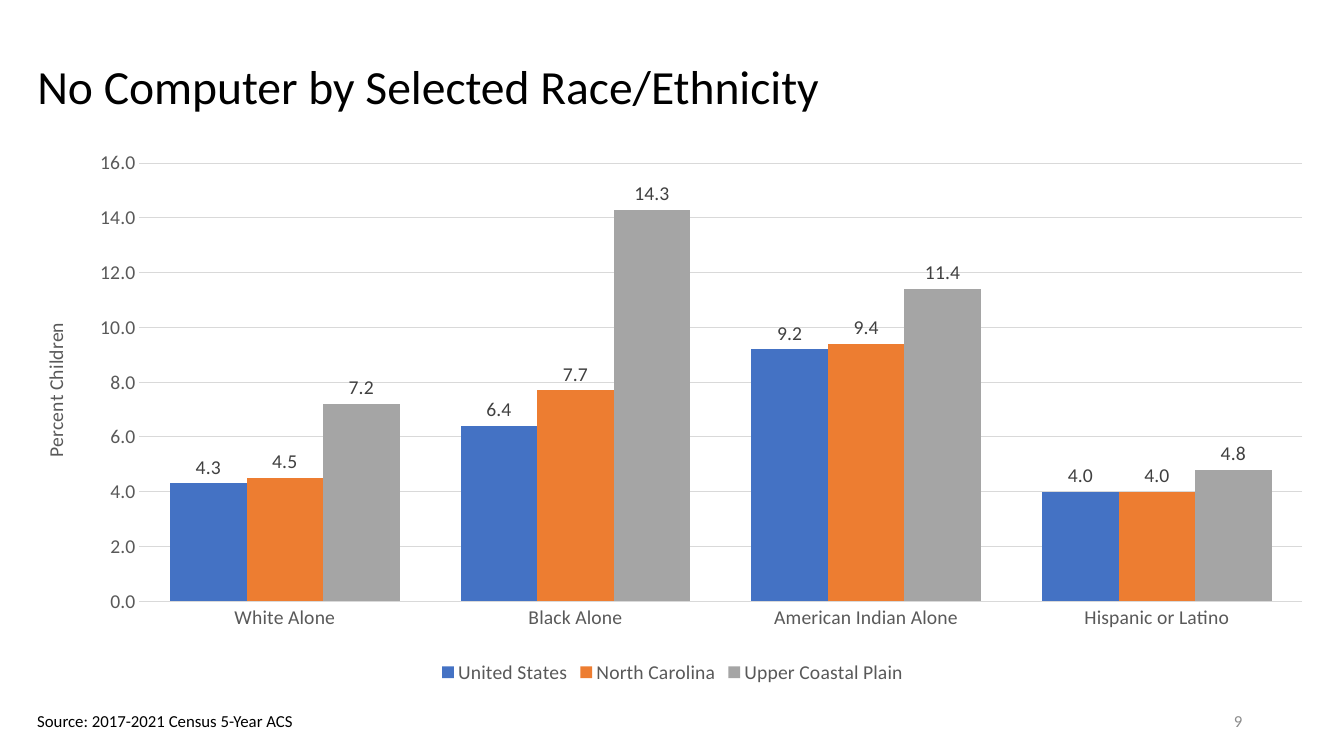
from dataclasses import dataclass

from lxml.etree import SubElement
from pptx import Presentation
from pptx.chart.data import CategoryChartData
from pptx.dml.color import RGBColor
from pptx.enum.chart import XL_CHART_TYPE as ChartType
from pptx.enum.chart import XL_LABEL_POSITION as LabelPosition
from pptx.enum.chart import XL_LEGEND_POSITION as LegendPosition
from pptx.enum.chart import XL_TICK_MARK as TickMark
from pptx.enum.text import MSO_ANCHOR as Anchor
from pptx.enum.text import PP_ALIGN as Align
from pptx.oxml.ns import qn
from pptx.util import Inches, Pt


@dataclass(frozen=True)
class Theme:
    font: str = "Calibri"
    ink: str = "000000"
    axis_text: str = "595959"
    label_text: str = "404040"
    page_number: str = "8C8C8C"
    grid: str = "D9D9D9"
    title_size: int = 34
    chart_size: int = 14
    note_size: int = 12
    grid_width: float = 0.75


@dataclass(frozen=True)
class Region:
    name: str
    color: str
    values: tuple[float, ...]


@dataclass(frozen=True)
class Note:
    text: str
    left: float
    top: float
    width: float
    height: float
    color: str
    align: Align
    anchor: Anchor
    wrap: bool


THEME = Theme()
NUMBER_FORMAT = "#,##0.0"
GROUPS = ("White Alone", "Black Alone", "American Indian Alone", "Hispanic or Latino")
REGIONS = (
    Region("United States", "4472C4", (4.3, 6.4, 9.2, 4.0)),
    Region("North Carolina", "ED7D31", (4.5, 7.7, 9.4, 4.0)),
    Region("Upper Coastal Plain", "A5A5A5", (7.2, 14.3, 11.4, 4.8)),
)
NOTES = (
    Note("9", 9.42, 6.95, 3, 0.4, THEME.page_number, Align.RIGHT, Anchor.MIDDLE, True),
    Note("Source: 2017-2021 Census 5-Year ACS", 0.27, 7, 2.78, 0.3,
         THEME.ink, Align.LEFT, Anchor.TOP, False),
)
PLOT_AREA = {"x": 0.087, "y": 0.035, "w": 0.901, "h": 0.805}


def style_font(font, size: int, color: str) -> None:
    font.name = THEME.font
    font.size = Pt(size)
    font.bold = False
    font.color.rgb = RGBColor.from_string(color)


def style_line(line) -> None:
    line.color.rgb = RGBColor.from_string(THEME.grid)
    line.width = Pt(THEME.grid_width)


def add_span(para, text: str, size: int, color: str) -> None:
    span = para.add_run()
    span.text = text
    style_font(span.font, size, color)


def add_title(page, text: str) -> None:
    title = page.shapes.title
    title.left, title.top = Inches(0.27), Inches(0.34)
    title.width, title.height = Inches(12.76), Inches(1.09)
    title.text_frame.vertical_anchor = Anchor.MIDDLE
    para = title.text_frame.paragraphs[0]
    para.alignment = Align.LEFT
    para.line_spacing = 0.9
    add_span(para, text, THEME.title_size, THEME.ink)


def add_note(page, note: Note) -> None:
    box = page.shapes.add_textbox(Inches(note.left), Inches(note.top),
                                  Inches(note.width), Inches(note.height))
    box.text_frame.word_wrap = note.wrap
    box.text_frame.vertical_anchor = note.anchor
    para = box.text_frame.paragraphs[0]
    para.alignment = note.align
    add_span(para, note.text, THEME.note_size, note.color)


def place_plot(chart) -> None:
    """Fix the inner plot area as fractions of the chart frame."""
    plot_area = chart.plots[0]._element.getparent()
    for old_layout in plot_area.findall(qn("c:layout")):
        plot_area.remove(old_layout)
    layout = SubElement(plot_area, qn("c:layout"))
    plot_area.insert(0, layout)
    manual = SubElement(layout, qn("c:manualLayout"))
    settings = {"layoutTarget": "inner", "xMode": "edge", "yMode": "edge", **PLOT_AREA}
    for tag, value in settings.items():
        SubElement(manual, qn(f"c:{tag}")).set("val", str(value))


def style_axes(chart) -> None:
    for axis in (chart.category_axis, chart.value_axis):
        axis.major_tick_mark = axis.minor_tick_mark = TickMark.NONE
        style_font(axis.tick_labels.font, THEME.chart_size, THEME.axis_text)
    style_line(chart.category_axis.format.line)

    percent = chart.value_axis
    percent.minimum_scale, percent.maximum_scale, percent.major_unit = 0, 16, 2
    percent.format.line.fill.background()
    style_line(percent.major_gridlines.format.line)
    percent.tick_labels.number_format = NUMBER_FORMAT
    percent.tick_labels.number_format_is_linked = False
    para = percent.axis_title.text_frame.paragraphs[0]
    add_span(para, "Percent Children", THEME.chart_size, THEME.axis_text)


def style_bars(plot) -> None:
    plot.gap_width, plot.overlap = 80, 0
    plot.vary_by_categories = False
    for series, region in zip(plot.series, REGIONS):
        series.format.fill.solid()
        series.format.fill.fore_color.rgb = RGBColor.from_string(region.color)
        labels = series.data_labels
        labels.show_value = True
        labels.position = LabelPosition.OUTSIDE_END
        labels.number_format = NUMBER_FORMAT
        labels.number_format_is_linked = False
        style_font(labels.font, THEME.chart_size, THEME.label_text)


def add_computer_chart(page) -> None:
    chart_data = CategoryChartData(number_format=NUMBER_FORMAT)
    chart_data.categories = GROUPS
    for region in REGIONS:
        chart_data.add_series(region.name, region.values)
    chart = page.shapes.add_chart(ChartType.COLUMN_CLUSTERED, Inches(0.27), Inches(1.43),
                                  Inches(12.8), Inches(5.4), chart_data).chart
    style_font(chart.font, THEME.chart_size, THEME.ink)
    chart.has_title = False
    chart.has_legend = True
    chart.legend.position = LegendPosition.BOTTOM
    chart.legend.include_in_layout = False
    style_font(chart.legend.font, THEME.chart_size, THEME.axis_text)
    style_axes(chart)
    style_bars(chart.plots[0])
    place_plot(chart)


def main() -> None:
    deck = Presentation()
    deck.slide_width, deck.slide_height = Inches(13.33), Inches(7.5)
    page = deck.slides.add_slide(deck.slide_layouts.get_by_name("Title Only"))
    add_title(page, "No Computer by Selected Race/Ethnicity")
    for note in NOTES:
        add_note(page, note)
    add_computer_chart(page)
    deck.save("out.pptx")


if __name__ == "__main__":
    main()
